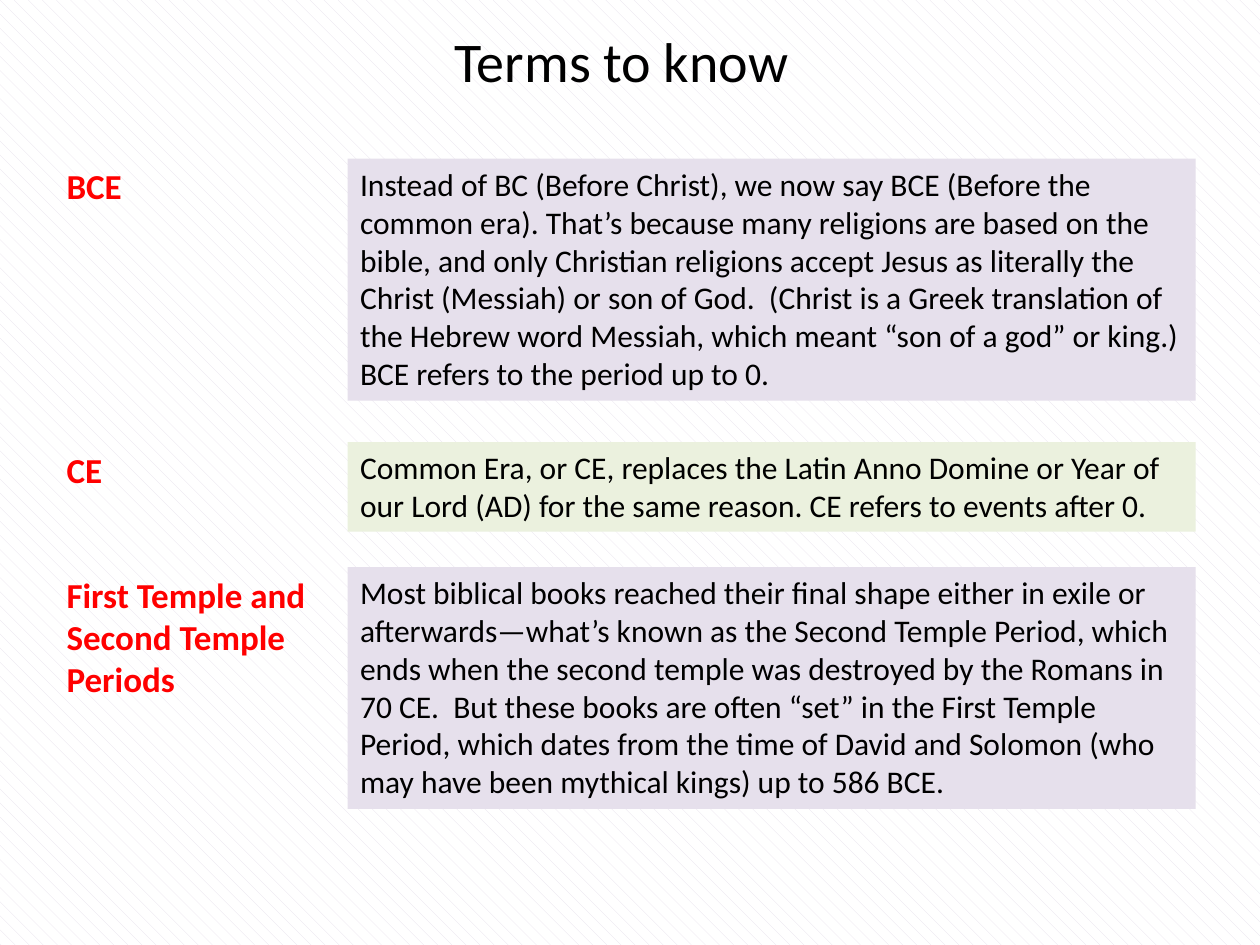
from dataclasses import dataclass

from pptx import Presentation
from pptx.dml.color import RGBColor
from pptx.enum.dml import MSO_PATTERN
from pptx.enum.shapes import MSO_SHAPE
from pptx.enum.text import MSO_ANCHOR, MSO_AUTO_SIZE, PP_ALIGN
from pptx.util import Inches, Pt


@dataclass(frozen=True)
class Theme:
    font: str = "Calibri"
    ink: str = "000000"
    accent: str = "FF0000"
    paper: str = "FFFFFF"
    lavender: str = "E6E0EC"
    green: str = "EBF1DE"
    title_size: int = 32
    term_size: int = 20
    body_size: int = 18


class TermSlide:
    """A slide on a grid of 100 columns by 75 rows."""

    def __init__(self, deck, theme):
        self.theme = theme
        self.column = deck.slide_width / 100
        self.row = deck.slide_height / 75
        self.slide = deck.slides.add_slide(deck.slide_layouts[6])

    def place(self, left, top, width, height):
        return (round(left * self.column), round(top * self.row),
                round(width * self.column), round(height * self.row))

    def set_text(self, shape, text, size, color, bold=False, wrap=False):
        frame = shape.text_frame
        frame.text = text
        frame.word_wrap = wrap
        frame.auto_size = MSO_AUTO_SIZE.SHAPE_TO_FIT_TEXT
        frame.vertical_anchor = MSO_ANCHOR.TOP
        for para in frame.paragraphs:
            para.alignment = PP_ALIGN.LEFT
            for span in para.runs:
                span.font.name = self.theme.font
                span.font.size = Pt(size)
                span.font.bold = bold
                span.font.color.rgb = RGBColor.from_string(color)

    def background(self):
        fill = self.slide.background.fill
        fill.patterned()
        fill.pattern = MSO_PATTERN.SHINGLE
        fill.fore_color.rgb = RGBColor.from_string(self.theme.lavender)
        fill.back_color.rgb = RGBColor.from_string(self.theme.paper)

    def title(self, text, *area):
        box = self.slide.shapes.add_textbox(*self.place(*area))
        self.set_text(box, text, self.theme.title_size, self.theme.ink)

    def term(self, text, *area):
        box = self.slide.shapes.add_textbox(*self.place(*area))
        self.set_text(box, text, self.theme.term_size, self.theme.accent, bold=True)

    def definition(self, text, color, *area):
        box = self.slide.shapes.add_shape(MSO_SHAPE.RECTANGLE, *self.place(*area))
        box.shadow.inherit = False
        box.fill.solid()
        box.fill.fore_color.rgb = RGBColor.from_string(color)
        box.line.fill.background()
        self.set_text(box, text, self.theme.body_size, self.theme.ink, wrap=True)


def main():
    deck = Presentation()
    deck.slide_width, deck.slide_height = Inches(10), Inches(7.5)
    theme = Theme()
    page = TermSlide(deck, theme)

    # Backdrop and title
    page.background()
    page.title("Terms to know", 35.1, 1.6, 28.8, 6.4)

    # Term, its width and height, then definition, its color, top and height
    entries = [
        ("BCE", 6.5, 4.4,
         "Instead of BC (Before Christ), we now say BCE (Before the common era). "
         "That’s because many religions are based on the bible, and only Christian "
         "religions accept Jesus as literally the Christ (Messiah) or son of God.  "
         "(Christ is a Greek translation of the Hebrew word Messiah, which meant "
         "“son of a god” or king.) BCE refers to the period up to 0.",
         theme.lavender, 12.6, 19.2),
        ("CE", 4.9, 4.4,
         "Common Era, or CE, replaces the Latin Anno Domine or Year of our Lord (AD) "
         "for the same reason. CE refers to events after 0.",
         theme.green, 35.1, 7.1),
        ("First Temple and\nSecond Temple\nPeriods", 21.7, 11.1,
         "Most biblical books reached their final shape either in exile or "
         "afterwards—what’s known as the Second Temple Period, which ends when the "
         "second temple was destroyed by the Romans in 70 CE.  But these books are "
         "often “set” in the First Temple Period, which dates from the time of David "
         "and Solomon (who may have been mythical kings) up to 586 BCE.",
         theme.lavender, 45, 19.2),
    ]

    # Terms on the left, definitions on the right
    for term, term_width, term_height, meaning, color, top, height in entries:
        page.term(term, 4.3, top, term_width, term_height)
        page.definition(meaning, color, 27.6, top, 67.3, height)

    deck.save("out.pptx")


if __name__ == "__main__":
    main()
